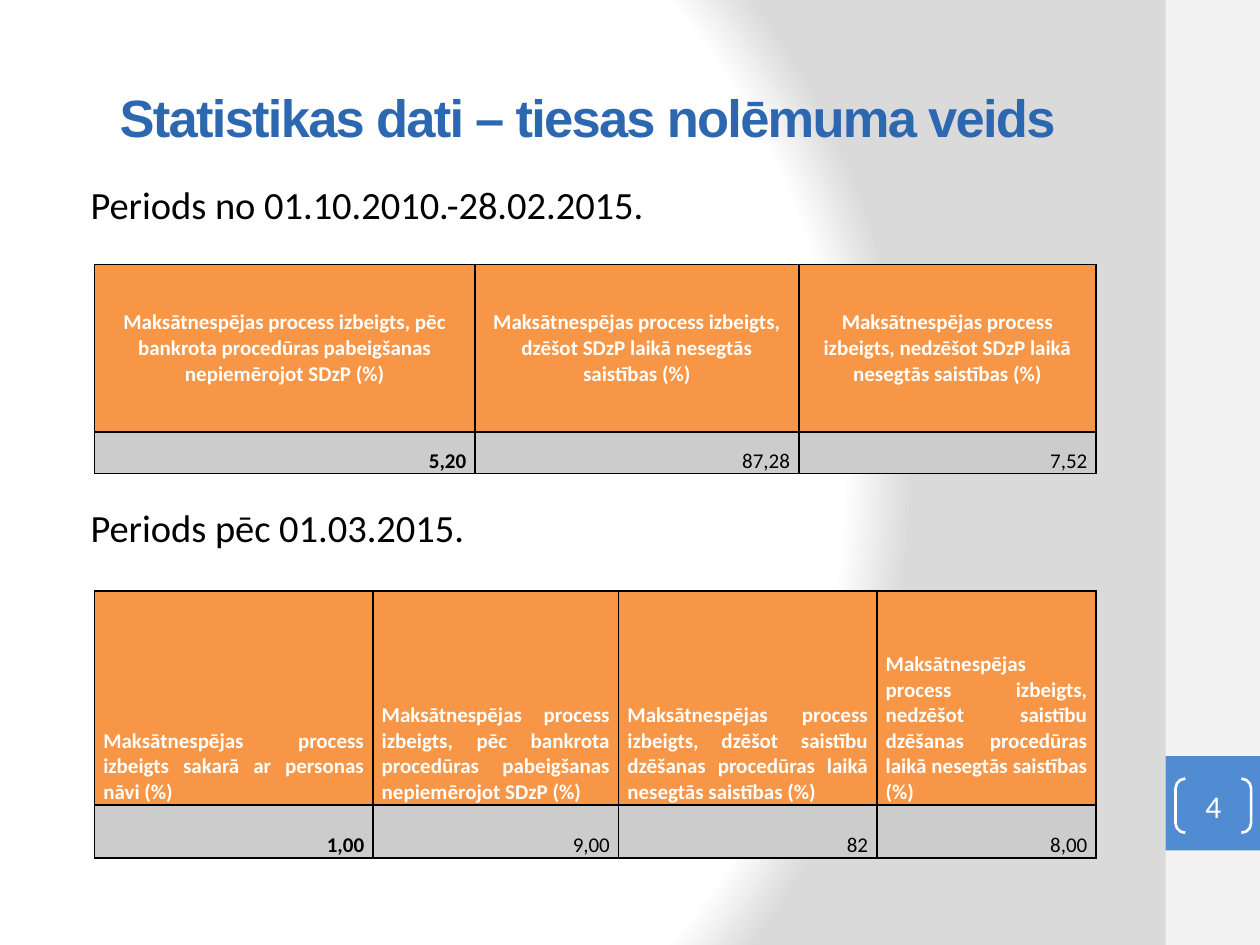
from pptx import Presentation
from pptx import util as u
from pptx.dml.color import RGBColor
from pptx.enum import shapes, text
from pptx.oxml import parse_xml
from pptx.oxml.ns import nsdecls

WHITE = RGBColor(0xFF, 0xFF, 0xFF)
BLACK = RGBColor(0, 0, 0)
TITLE_BLUE = RGBColor(0x2C, 0x67, 0xAF)
NUMBER_BLUE = RGBColor(0x51, 0x8C, 0xD3)
SIDEBAR_GREY = RGBColor(0xF2, 0xF2, 0xF2)
HEADER_ORANGE = RGBColor(0xF7, 0x96, 0x46)
VALUE_GREY = RGBColor(0xCC, 0xCC, 0xCC)

ALIGN = text.PP_ALIGN
ANCHOR = text.MSO_ANCHOR
TABLE_LEFT = 0.75

RESULT_TABLE = {
    "top": 2.1,
    "widths": [3.02, 2.57, 2.36],
    "heights": [1.33, 0.33],
    "headers": [
        "Maksātnespējas process izbeigts, pēc bankrota procedūras pabeigšanas nepiemērojot SDzP (%)",
        "Maksātnespējas process izbeigts, dzēšot SDzP laikā nesegtās saistības (%)",
        "Maksātnespējas process izbeigts, nedzēšot SDzP laikā nesegtās saistības (%)",
    ],
    "values": ["5,20", "87,28", "7,52"],
    "align": ALIGN.CENTER,
    "anchor": ANCHOR.MIDDLE,
}
LATER_TABLE = {
    "top": 4.69,
    "widths": [2.21, 1.95, 2.05, 1.74],
    "heights": [1.7, 0.42],
    "headers": [
        "Maksātnespējas process izbeigts sakarā ar personas nāvi (%)",
        "Maksātnespējas process izbeigts, pēc bankrota procedūras pabeigšanas nepiemērojot SDzP (%)",
        "Maksātnespējas process izbeigts, dzēšot saistību dzēšanas procedūras laikā nesegtās saistības (%)",
        "Maksātnespējas process izbeigts, nedzēšot saistību dzēšanas procedūras laikā nesegtās saistības (%)",
    ],
    "values": ["1,00", "9,00", "82", "8,00"],
    "align": ALIGN.JUSTIFY,
    "anchor": ANCHOR.BOTTOM,
}


def inches(*lengths):
    """Convert plain numbers to lengths."""
    return [u.Inches(length) for length in lengths]


def set_background(slide):
    """Give the slide a circular white to grey gradient."""
    stops = "".join(
        f'<a:gs pos="{position}"><a:srgbClr val="{color}"/></a:gs>'
        for position, color in ((0, "FFFFFF"), (91000, "FFFFFF"), (100000, "DADADA"))
    )
    background = parse_xml(
        f'<p:bg {nsdecls("p", "a")}><p:bgPr><a:gradFill rotWithShape="1">'
        f'<a:gsLst>{stops}</a:gsLst><a:path path="circle">'
        '<a:fillToRect l="20000" t="50000" r="100000" b="50000"/></a:path>'
        '</a:gradFill><a:effectLst/></p:bgPr></p:bg>'
    )
    slide.element.cSld.insert(0, background)


def write(frame, content, size, color, align=ALIGN.LEFT, bold=False, font="Calibri"):
    """Write one formatted run in the first paragraph and return the run."""
    paragraph = frame.paragraphs[0]
    paragraph.alignment = align
    run = paragraph.add_run()
    run.text = content
    run.font.name = font
    run.font.size = u.Pt(size)
    run.font.bold = bold
    run.font.color.rgb = color
    return run


def add_panel(slide, box, color):
    """Add a plain filled rectangle."""
    shape = slide.shapes.add_shape(shapes.MSO_SHAPE.RECTANGLE, *inches(*box))
    shape.shadow.inherit = False
    shape.fill.solid()
    shape.fill.fore_color.rgb = color
    shape.line.fill.background()


def set_title(slide, content):
    """Place and format the title placeholder."""
    title = slide.shapes.title
    title.left, title.top, title.width, title.height = inches(0.5, 0.3, 8.33, 1.25)
    title.text_frame.vertical_anchor = ANCHOR.MIDDLE
    run = write(title.text_frame, content, 30, TITLE_BLUE, ALIGN.CENTER, True, "Arial")
    run.font._element.set("spc", "-100")


def add_period(slide, top, content):
    """Add the line that names a table's period."""
    box = slide.shapes.add_textbox(*inches(0.62, top, 8.21, 0.48))
    box.text_frame.word_wrap = True
    write(box.text_frame, content, 22, BLACK)


def add_slide_number(slide, number):
    """Add the bracketed slide number."""
    shape = slide.shapes.add_shape(
        shapes.MSO_SHAPE.DOUBLE_BRACKET, *inches(9.33, 6.18, 0.6, 0.43)
    )
    shape.adjustments[0] = 0.18
    shape.shadow.inherit = False
    shape.fill.background()
    shape.line.color.rgb = WHITE
    shape.line.width = u.Pt(1.5)
    frame = shape.text_frame
    frame.margin_left = frame.margin_right = frame.margin_top = frame.margin_bottom = 0
    frame.vertical_anchor = ANCHOR.MIDDLE
    write(frame, number, 18, WHITE, ALIGN.CENTER)


def format_cell(cell, color, anchor):
    """Set a cell's margins, anchor, borders and fill."""
    cell.margin_left = cell.margin_right = u.Inches(0.07)
    cell.margin_top = cell.margin_bottom = 0
    cell.vertical_anchor = anchor
    properties = cell._tc.get_or_add_tcPr()
    for side in ("lnL", "lnR", "lnT", "lnB"):
        properties.append(parse_xml(
            f'<a:{side} {nsdecls("a")} w="{u.Pt(1)}"><a:solidFill>'
            f'<a:srgbClr val="{BLACK}"/></a:solidFill></a:{side}>'
        ))
    cell.fill.solid()
    cell.fill.fore_color.rgb = color


def add_statistics_table(slide, data):
    """Add a table with a header row and a row of values."""
    widths, heights = data["widths"], data["heights"]
    table = slide.shapes.add_table(
        len(heights), len(widths),
        *inches(TABLE_LEFT, data["top"], sum(widths), sum(heights)),
    ).table
    for row, height in zip(table.rows, heights):
        row.height = u.Inches(height)
    columns = zip(widths, data["headers"], data["values"])
    for index, (width, header, value) in enumerate(columns):
        table.columns[index].width = u.Inches(width)
        header_cell, value_cell = table.cell(0, index), table.cell(1, index)
        format_cell(header_cell, HEADER_ORANGE, data["anchor"])
        write(header_cell.text_frame, header, 12, WHITE, data["align"], True)
        format_cell(value_cell, VALUE_GREY, ANCHOR.BOTTOM)
        write(value_cell.text_frame, value, 12, BLACK, ALIGN.RIGHT, index == 0)


def main():
    """Build and save the slide."""
    presentation = Presentation()
    presentation.slide_width, presentation.slide_height = inches(10, 7.5)
    slide = presentation.slides.add_slide(presentation.slide_layouts[5])
    set_background(slide)
    add_panel(slide, (9.25, 0, 0.75, 7.5), SIDEBAR_GREY)
    add_panel(slide, (9.25, 6, 0.75, 0.75), NUMBER_BLUE)
    set_title(slide, "Statistikas dati – tiesas nolēmuma veids")
    add_period(slide, 1.39, "Periods no 01.10.2010.-28.02.2015.")
    add_period(slide, 3.95, "Periods pēc 01.03.2015.")
    add_slide_number(slide, "4")
    add_statistics_table(slide, RESULT_TABLE)
    add_statistics_table(slide, LATER_TABLE)
    presentation.save("out.pptx")


if __name__ == "__main__":
    main()
